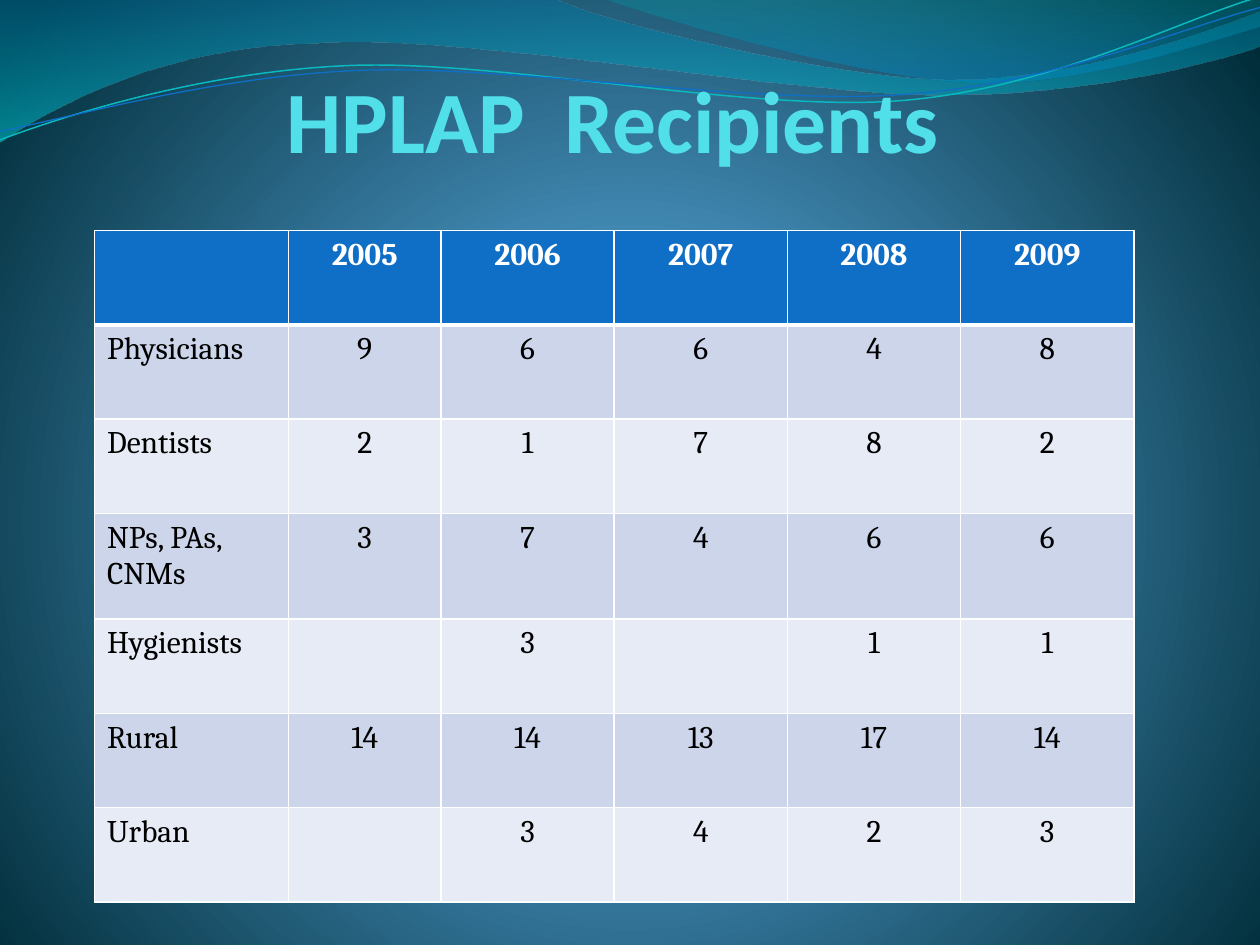
from math import cos, radians, sin

from pptx import Presentation
from pptx.dml.color import RGBColor
from pptx.enum.text import MSO_ANCHOR, PP_ALIGN
from pptx.oxml import parse_xml
from pptx.oxml.ns import nsdecls, qn
from pptx.util import Inches, Pt

TITLE = "HPLAP  Recipients"
ROWS = [
    ["", "2005", "2006", "2007", "2008", "2009"],
    ["Physicians", "9", "6", "6", "4", "8"],
    ["Dentists", "2", "1", "7", "8", "2"],
    ["NPs, PAs, CNMs", "3", "7", "4", "6", "6"],
    ["Hygienists", "", "3", "", "1", "1"],
    ["Rural", "14", "14", "13", "17", "14"],
    ["Urban", "", "3", "4", "2", "3"],
]
TABLE_WIDTH, TABLE_HEIGHT = 8.25, 5.33
FIRST_WIDTHS = [1.54, 1.21]
TALL_ROW, TALL_HEIGHT = 3, 0.84

WHITE = RGBColor(0xFF, 0xFF, 0xFF)
BLACK = RGBColor(0, 0, 0)
AQUA = RGBColor(0x51, 0xE0, 0xEA)
BLUE = RGBColor(0x0F, 0x6F, 0xC6)
TEAL = RGBColor(0x0A, 0xB8, 0xBF)
BANDS = [RGBColor(0xE7, 0xEB, 0xF5), RGBColor(0xCC, 0xD5, 0xEA)]

# Gradient stops: position %, colour, opacity %
BACKGROUND_STOPS = [(0, "4AA0D6", 100), (25, "4C98C7", 100), (100, "002C38", 100)]
RADIAL = ('<a:path path="circle"><a:fillToRect l="10000" t="110000" '
          'r="10000" b="100000"/></a:path>')
DOWNWARD = '<a:lin ang="5400000" scaled="1"/>'

# Outlines: a pair is a straight step, six numbers are a Bezier step
WAVES = [
    ([(0, 0), (4.4, -0.01), (4.76, 0.17, 6.64, 0.63, 7.58, 0.63),
      (8.53, 0.63, 9.58, 0.26, 10, 0.09), (10.01, 0.36),
      (9.83, 0.44, 8.7, 0.76, 7.46, 0.75), (6.22, 0.75, 3.82, 0.28, 2.57, 0.34),
      (1.29, 0.36, 0.46, 0.83, -0.01, 1.13), (0, 0)],
     [(0, "0074A1", 45), (100, "00C6CF", 55)]),
    ([(4.79, -0.01), (5.09, 0.11, 6.82, 0.62, 7.69, 0.65),
      (8.56, 0.69, 9.61, 0.32, 10, 0.21), (10, 0), (4.79, -0.01)],
     [(0, "00A1A9", 30), (80, "008BBF", 45)]),
]
STRAND_ROTATION = 357.3
# Strands: steps as seen after rotation, centre of rotation, colour, width
STRANDS = [
    ([(0, 1.11), (0.48, 0.93, 1.58, 0.57, 2.77, 0.52),
      (3.95, 0.47, 5.93, 0.89, 7.13, 0.8), (8.33, 0.71, 9.38, 0.15, 9.98, -0.02)],
     (4.99, 0.58), TEAL, 0.85),
    ([(0, 1.04), (0.47, 0.96, 1.64, 0.61, 2.83, 0.56),
      (4.03, 0.51, 5.97, 0.84, 7.17, 0.75), (8.36, 0.67, 9.41, 0.21, 10, 0.06)],
     (5, 0.59), BLUE, 0.75),
]


def set_gradient(fill, element, stops, direction):
    fill.gradient()
    stop_xml = "".join(
        f'<a:gs pos="{position * 1000}"><a:srgbClr val="{color}">'
        f'<a:alpha val="{opacity * 1000}"/></a:srgbClr></a:gs>'
        for position, color, opacity in stops)
    gradient = parse_xml(f'<a:gradFill {nsdecls("a")} rotWithShape="1">'
                         f'<a:gsLst>{stop_xml}</a:gsLst>{direction}</a:gradFill>')
    old = element.find(".//" + qn("a:gradFill"))
    old.getparent().replace(old, gradient)


def turn_back(step, center):
    """Undo the strand rotation for every point of a step."""
    angle = -radians(STRAND_ROTATION)
    turned = []
    for x, y in zip(step[::2], step[1::2]):
        dx, dy = x - center[0], y - center[1]
        turned += [center[0] + dx * cos(angle) - dy * sin(angle),
                   center[1] + dx * sin(angle) + dy * cos(angle)]
    return turned


def add_outline(slide, steps, closed=False):
    """Draw the steps; each Bezier step's three lines become one curve."""
    points = [(Inches(x), Inches(y)) for step in steps
              for x, y in zip(step[::2], step[1::2])]
    builder = slide.shapes.build_freeform(*points[0], scale=1.0)
    builder.add_line_segments(points[1:], close=closed)
    shape = builder.convert_to_shape()
    shape.shadow.inherit = False
    lines = iter(list(shape._element.iter(qn("a:lnTo"))))
    for step in steps[1:]:
        line = next(lines)
        if len(step) == 6:
            curve = parse_xml(f'<a:cubicBezTo {nsdecls("a")}/>')
            line.addprevious(curve)
            for part in (line, next(lines), next(lines)):
                curve.append(part[0])
                part.getparent().remove(part)
    return shape


def write_text(frame, text, *, font, size, color, bold=False, align=PP_ALIGN.LEFT):
    paragraph = frame.paragraphs[0]
    paragraph.alignment = align
    run = paragraph.add_run()
    run.text = text
    run.font.name = font
    run.font.size = Pt(size)
    run.font.bold = bold
    run.font.color.rgb = color


def set_borders(cell, widths):
    properties = cell._tc.get_or_add_tcPr()
    for index, (side, width) in enumerate(widths.items()):
        line = parse_xml(f'<a:{side} {nsdecls("a")} w="{Pt(width)}"><a:solidFill>'
                         f'<a:srgbClr val="{WHITE}"/></a:solidFill></a:{side}>')
        properties.insert(index, line)


def add_recipient_table(slide):
    row_count, column_count = len(ROWS), len(ROWS[0])
    table = slide.shapes.add_table(
        row_count, column_count, Inches(0.75), Inches(1.83),
        Inches(TABLE_WIDTH), Inches(TABLE_HEIGHT)).table
    other_count = column_count - len(FIRST_WIDTHS)
    other_width = (TABLE_WIDTH - sum(FIRST_WIDTHS)) / other_count
    for column, width in zip(table.columns, FIRST_WIDTHS + [other_width] * other_count):
        column.width = Inches(width)
    row_height = (TABLE_HEIGHT - TALL_HEIGHT) / (row_count - 1)
    for row_index, values in enumerate(ROWS):
        header = row_index == 0
        table.rows[row_index].height = Inches(
            TALL_HEIGHT if row_index == TALL_ROW else row_height)
        for column_index, value in enumerate(values):
            cell = table.cell(row_index, column_index)
            cell.fill.solid()
            cell.fill.fore_color.rgb = BLUE if header else BANDS[row_index % 2]
            set_borders(cell, {"lnL": 1, "lnR": 1, "lnT": 3 if row_index == 1 else 1,
                               "lnB": 3 if header else 1})
            if value:
                write_text(cell.text_frame, value, font="Cambria", size=18, bold=header,
                           color=WHITE if header else BLACK,
                           align=PP_ALIGN.CENTER if column_index else PP_ALIGN.LEFT)


def main():
    presentation = Presentation()
    presentation.slide_width = Inches(10)
    presentation.slide_height = Inches(7.5)
    slide = presentation.slides.add_slide(presentation.slide_layouts[6])
    set_gradient(slide.background.fill, slide._element, BACKGROUND_STOPS, RADIAL)

    for steps, stops in WAVES:
        wave = add_outline(slide, steps, closed=True)
        set_gradient(wave.fill, wave._element, stops, DOWNWARD)
        wave.line.fill.background()
    for steps, center, color, width in STRANDS:
        strand = add_outline(slide, [turn_back(step, center) for step in steps])
        strand.rotation = STRAND_ROTATION
        strand.fill.background()
        strand.line.color.rgb = color
        strand.line.width = Pt(width)

    title = slide.shapes.add_textbox(Inches(0.58), Inches(0.33), Inches(8.59), Inches(1.03))
    frame = title.text_frame
    frame.word_wrap = True
    frame.vertical_anchor = MSO_ANCHOR.BOTTOM
    frame.margin_left = frame.margin_top = frame.margin_bottom = 0
    frame.margin_right = Inches(0.02)
    write_text(frame, TITLE, font="Calibri", size=50, color=AQUA, bold=True,
               align=PP_ALIGN.CENTER)

    add_recipient_table(slide)
    presentation.save("out.pptx")


if __name__ == "__main__":
    main()
